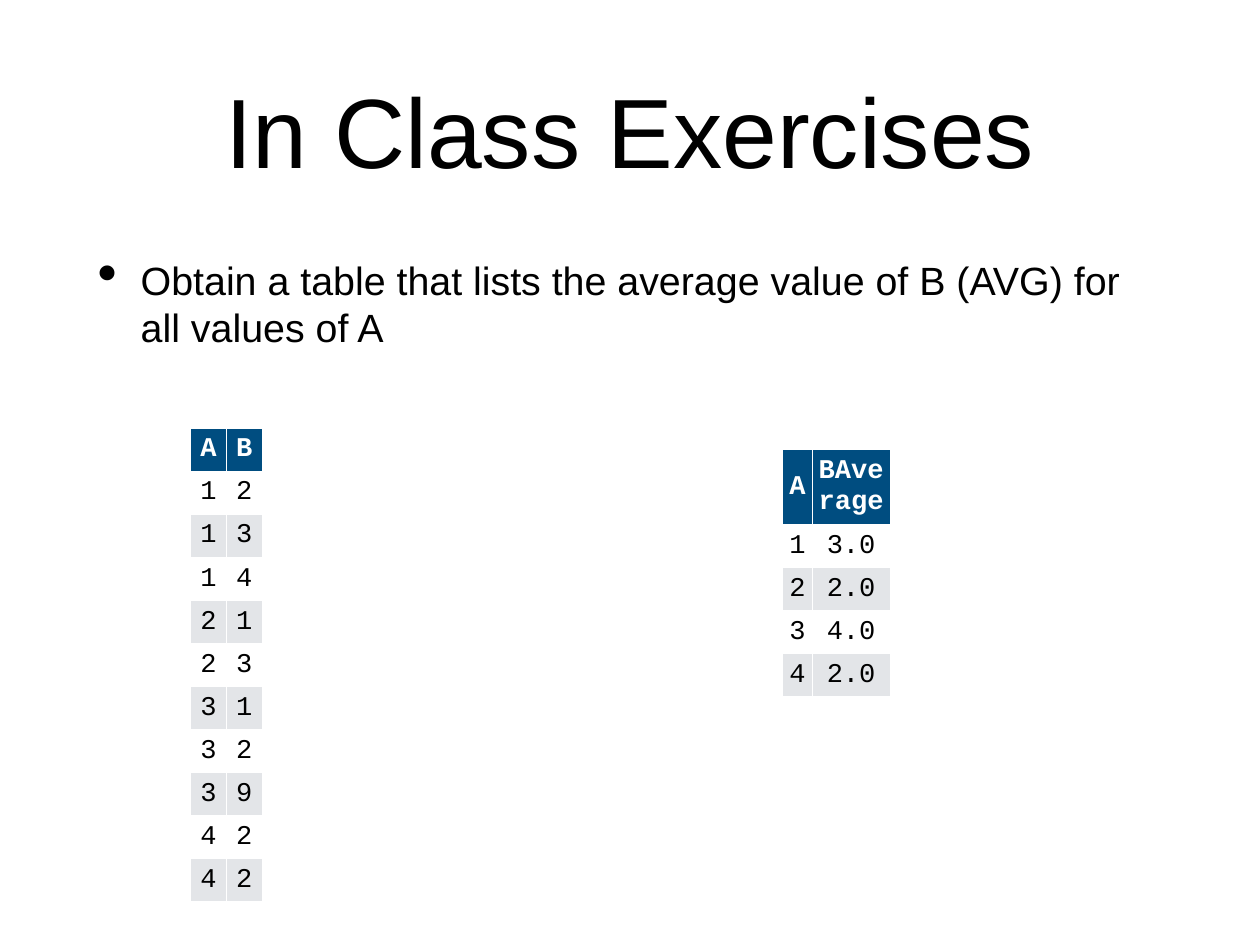
from lxml.etree import SubElement
from pptx import Presentation
from pptx.dml.color import RGBColor
from pptx.enum.text import MSO_ANCHOR, PP_ALIGN
from pptx.oxml.ns import qn
from pptx.util import Pt

COLORS = {"text": "000000", "header": "004D80", "header_text": "FFFFFF",
          "plain": "FFFFFF", "band": "E3E5E8"}
INSET = 4.3


class SlideBuilder:
    def __init__(self, slide):
        self.slide = slide
        self.text_font = "Arial"
        self.table_font = "Courier New"

    def format_runs(self, paragraph, font, size, color, bold=False):
        for run in paragraph.runs:
            run.font.name = font
            run.font.size = Pt(size)
            run.font.bold = bold
            run.font.color.rgb = RGBColor.from_string(COLORS[color])

    def set_insets(self, target):
        target.margin_left = target.margin_right = Pt(INSET)
        target.margin_top = target.margin_bottom = Pt(INSET)

    def text(self, content, left, top, width, height, size, anchor, align):
        shape = self.slide.shapes.add_textbox(Pt(left), Pt(top), Pt(width), Pt(height))
        text_frame = shape.text_frame
        text_frame.word_wrap = True
        text_frame.vertical_anchor = anchor
        self.set_insets(text_frame)
        text_frame.text = content
        paragraph = text_frame.paragraphs[0]
        paragraph.alignment = align
        self.format_runs(paragraph, self.text_font, size, "text")
        return paragraph

    def bullet(self, paragraph, indent, space_before):
        paragraph.space_before = Pt(space_before)
        properties = paragraph._p.get_or_add_pPr()
        properties.set("marL", str(Pt(indent)))
        properties.set("indent", str(-Pt(indent)))
        SubElement(properties, qn("a:buSzPct"), val="145000")
        SubElement(properties, qn("a:buChar"), char="•")

    def table(self, rows, left, top, column_widths, row_height):
        frame = self.slide.shapes.add_table(
            len(rows), len(column_widths), Pt(left), Pt(top),
            Pt(sum(column_widths)), Pt(row_height * len(rows)))
        table = frame.table
        for column, width in zip(table.columns, column_widths):
            column.width = Pt(width)
        for row_index, values in enumerate(rows):
            is_header = row_index == 0
            fill = "header" if is_header else "plain" if row_index % 2 else "band"
            color = "header_text" if is_header else "text"
            for column_index, value in enumerate(values):
                cell = table.cell(row_index, column_index)
                cell.fill.solid()
                cell.fill.fore_color.rgb = RGBColor.from_string(COLORS[fill])
                cell.vertical_anchor = MSO_ANCHOR.MIDDLE
                self.set_insets(cell)
                cell.text = value
                paragraph = cell.text_frame.paragraphs[0]
                paragraph.alignment = PP_ALIGN.CENTER
                self.format_runs(paragraph, self.table_font, 22, color, is_header)


def main():
    presentation = Presentation()
    presentation.slide_width = Pt(1024)
    presentation.slide_height = Pt(768)
    builder = SlideBuilder(presentation.slides.add_slide(presentation.slide_layouts[6]))

    # Title
    builder.text("In Class Exercises", 75, 20, 874, 170, 80,
                 MSO_ANCHOR.MIDDLE, PP_ALIGN.CENTER)

    # Exercise
    exercise = builder.text(
        "Obtain a table that lists the average value of B (AVG) for all values of A",
        75, 204, 874, 495, 32, MSO_ANCHOR.TOP, PP_ALIGN.LEFT)
    builder.bullet(exercise, indent=35, space_before=22)

    # Result table
    averages = [("A", "BAverage"), ("1", "3.0"), ("2", "2.0"), ("3", "4.0"), ("4", "2.0")]
    builder.table(averages, 636, 365, (24, 63.4), 34.5)

    # Source table
    pairs = ["AB", "12", "13", "14", "21", "23", "31", "32", "39", "42", "42"]
    builder.table(pairs, 155, 348, (29, 29), 31.2)

    presentation.save("out.pptx")


if __name__ == "__main__":
    main()
